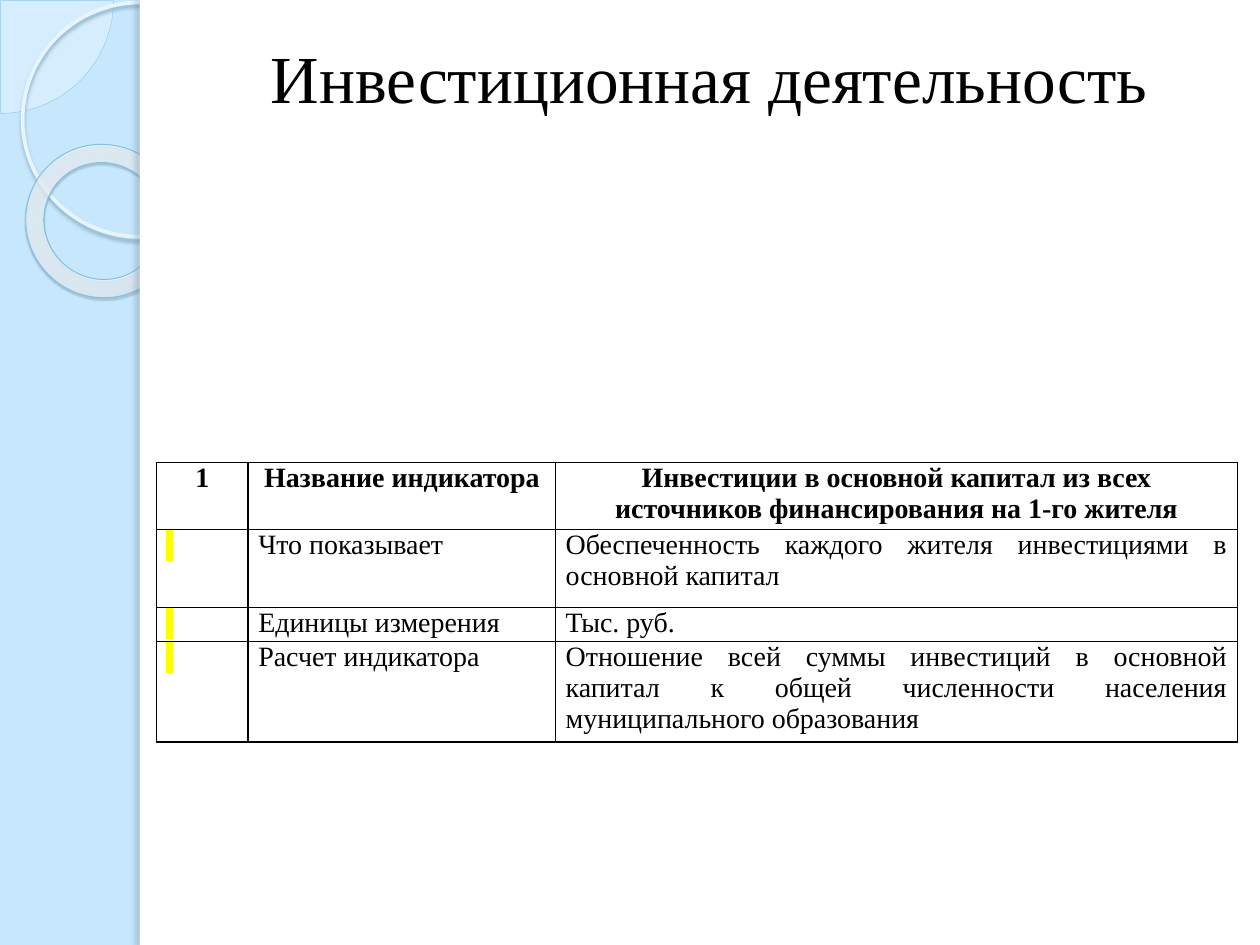
from dataclasses import dataclass

from lxml import etree
from pptx import Presentation
from pptx import util as u
from pptx.dml.color import RGBColor
from pptx.enum import shapes, text
from pptx.oxml import ns


@dataclass(frozen=True)
class Theme:
    font: str = "Times New Roman"
    title_size: float = 38.4
    cell_size: float = 16
    ink: str = "000000"
    paper: str = "FFFFFF"
    sky: str = "C6E7FC"
    marker: str = "FFFF00"
    petal: str = "F5FBFF"
    petal_line: str = "92CBEF"
    circle_line: str = "E6F5FF"
    ring_line: str = "85BFE4"
    ring_stops: tuple = ((0, "F8FCFF", 70), (70, "FCFEFF", 55), (100, "8ED3FF", 60))


THEME = Theme()
KIND = shapes.MSO_SHAPE
ALIGN = text.PP_ALIGN


def child(parent, tag, **attributes):
    element = etree.SubElement(parent, ns.qn(tag))
    for name, value in attributes.items():
        element.set(name, str(value))
    return element


def add_color(parent, color, alpha=100):
    tone = child(parent, "a:srgbClr", val=color)
    if alpha < 100:
        child(tone, "a:alpha", val=alpha * 1000)


def add_shadow(shape, color, alpha, blur, distance, angle):
    effects = shape._element.spPr.find(ns.qn("a:effectLst"))
    shadow = child(effects, "a:outerShdw", blurRad=u.Pt(blur), dist=u.Pt(distance),
                   dir=angle * 60000, algn="tl", rotWithShape=0)
    add_color(shadow, color, alpha)


def add_decor(page, kind, place, fill=None, alpha=100, line=None, width=0, shadow=None):
    shape = page.shapes.add_shape(kind, *map(u.Inches, place))
    shape.shadow.inherit = False
    if fill:
        shape.fill.solid()
        shape.fill.fore_color.rgb = RGBColor.from_string(fill)
        if alpha < 100:
            tone = shape._element.spPr.find(ns.qn("a:solidFill"))[0]
            child(tone, "a:alpha", val=alpha * 1000)
    else:
        shape.fill.background()
    if line:
        shape.line.color.rgb = RGBColor.from_string(line)
        shape.line.width = u.Pt(width)
    else:
        shape.line.fill.background()
    if shadow:
        add_shadow(shape, *shadow)
    return shape


def fill_radial(shape, stops):
    """Swap the empty fill for a circular gradient."""
    properties = shape._element.spPr
    gradient = etree.Element(ns.qn("a:gradFill"), rotWithShape="1")
    stop_list = child(gradient, "a:gsLst")
    for position, color, alpha in stops:
        add_color(child(stop_list, "a:gs", pos=position * 1000), color, alpha)
    route = child(gradient, "a:path", path="circle")
    child(route, "a:fillToRect", l=-408000, t=-50000, r=508000, b=150000)
    properties.replace(properties.find(ns.qn("a:noFill")), gradient)


def write(frame, wording, size=THEME.cell_size, bold=False, align=ALIGN.LEFT, highlight=None):
    frame.word_wrap = True
    para = frame.paragraphs[0]
    para.alignment = align
    span = para.add_run()
    span.text = wording
    span.font.name = THEME.font
    span.font.size = u.Pt(size)
    span.font.bold = bold
    span.font.color.rgb = RGBColor.from_string(THEME.ink)
    if highlight:
        mark = etree.Element(ns.qn("a:highlight"))
        add_color(mark, highlight)
        span.font._element.find(ns.qn("a:solidFill")).addnext(mark)
    return para


def add_borders(cell):
    properties = cell._tc.get_or_add_tcPr()
    for position, side in enumerate(("a:lnL", "a:lnR", "a:lnT", "a:lnB")):
        border = etree.Element(ns.qn(side), w=str(u.Pt(1)))
        add_color(child(border, "a:solidFill"), THEME.ink)
        properties.insert(position, border)


def add_sidebar(page):
    # Petal, thin circle and ring, cut off by the white sheet
    petal = add_decor(page, KIND.PIE, (-0.89, -0.89, 1.79, 1.79), THEME.petal, 33,
                      THEME.petal_line, 0.25)
    petal.adjustments[0], petal.adjustments[1] = 0, 54
    add_decor(page, KIND.OVAL, (0.18, 0.02, 1.86, 1.86), line=THEME.circle_line,
              width=2.15, shadow=("88ADC4", 85, 2, 2, 90))
    ring = add_decor(page, KIND.DONUT, (0.2, 1.15, 1.23, 1.21), line=THEME.ring_line,
                     width=0.58, shadow=("3F5767", 35, 1, 1.2, 75))
    ring.adjustments[0] = 0.12
    ring.rotation = 38.6
    fill_radial(ring, THEME.ring_stops)
    # White sheet and its shaded edge
    add_decor(page, KIND.RECTANGLE, (1.11, 0, 8.89, 7.5), THEME.paper)
    add_decor(page, KIND.RECTANGLE, (1.11, 0, 0.08, 7.5), THEME.paper,
              shadow=("61737F", 25, 3, 3, 180))


def add_title(page, wording):
    box = page.shapes.add_textbox(*map(u.Inches, (1.68, 0.24, 7.71, 0.94)))
    box.text_frame.vertical_anchor = text.MSO_ANCHOR.TOP
    para = write(box.text_frame, wording, size=THEME.title_size, align=ALIGN.CENTER)
    properties = para._p.get_or_add_pPr()
    properties.set("marL", str(u.Inches(0.39)))
    properties.set("indent", str(u.Inches(-0.2)))


def add_indicator_table(page, rows, widths, heights):
    frame = page.shapes.add_table(len(rows), len(widths), u.Inches(1.24), u.Inches(3.67),
                                  u.Inches(sum(widths)), u.Inches(sum(heights)))
    table = frame.table
    for column, width in zip(table.columns, widths):
        column.width = u.Inches(width)
    for row, height in zip(table.rows, heights):
        row.height = u.Inches(height)
    body_aligns = (ALIGN.LEFT, ALIGN.LEFT, ALIGN.JUSTIFY)
    for r, wordings in enumerate(rows):
        for c, wording in enumerate(wordings):
            cell = table.cell(r, c)
            cell.margin_left = cell.margin_right = u.Inches(0.08)
            cell.margin_top = cell.margin_bottom = 0
            cell.fill.background()
            add_borders(cell)
            write(cell.text_frame, wording, bold=r == 0,
                  align=body_aligns[c] if r else ALIGN.CENTER,
                  highlight=THEME.marker if r and c == 0 else None)


def main():
    deck = Presentation()
    deck.slide_width, deck.slide_height = u.Inches(10), u.Inches(7.5)
    page = deck.slides.add_slide(deck.slide_layouts[6])
    page.background.fill.solid()
    page.background.fill.fore_color.rgb = RGBColor.from_string(THEME.sky)

    add_sidebar(page)
    add_title(page, "Инвестиционная деятельность")
    # Each body row opens with one highlighted space
    rows = (
        ("1", "Название индикатора",
         "Инвестиции в основной капитал из всех источников финансирования на 1-го жителя"),
        (" ", "Что показывает",
         "Обеспеченность каждого жителя инвестициями в основной капитал"),
        (" ", "Единицы измерения", "Тыс. руб."),
        (" ", "Расчет индикатора",
         "Отношение всей суммы инвестиций в основной капитал к общей численности "
         "населения муниципального образования"),
    )
    # Rows of no height grow to fit their text
    add_indicator_table(page, rows, widths=(0.73, 2.44, 5.41),
                        heights=(0.05, 0.62, 0, 0))
    deck.save("out.pptx")


if __name__ == "__main__":
    main()
